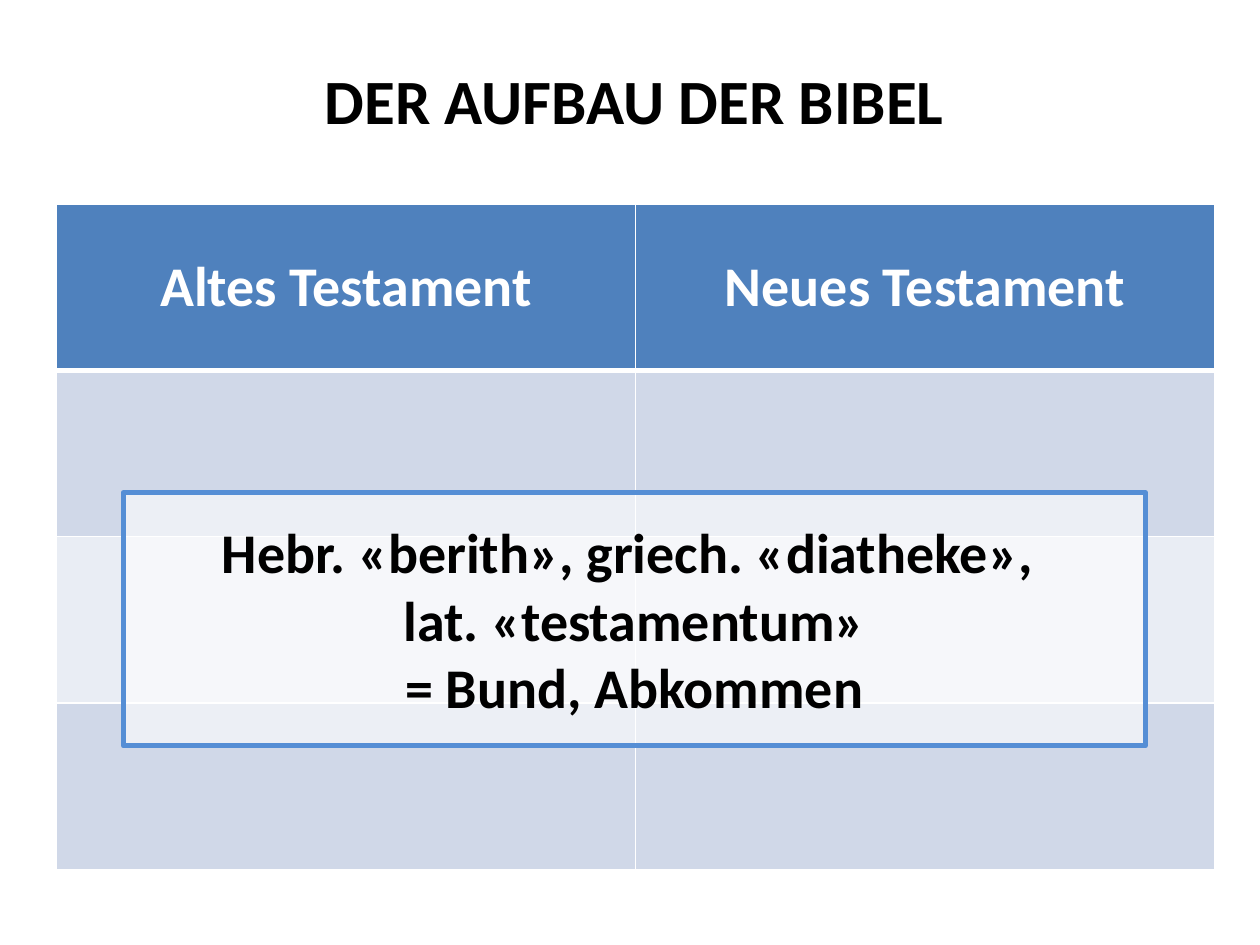
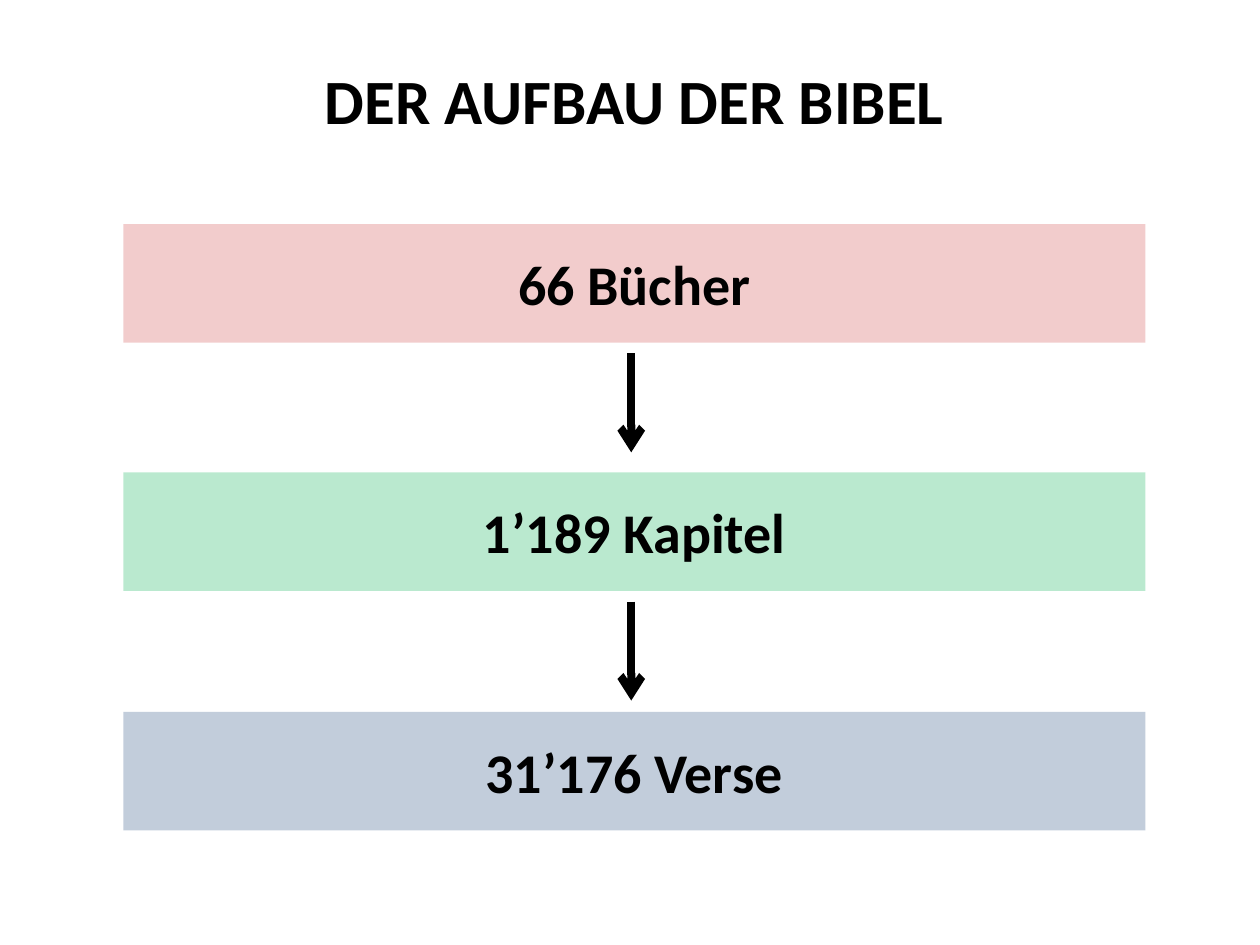
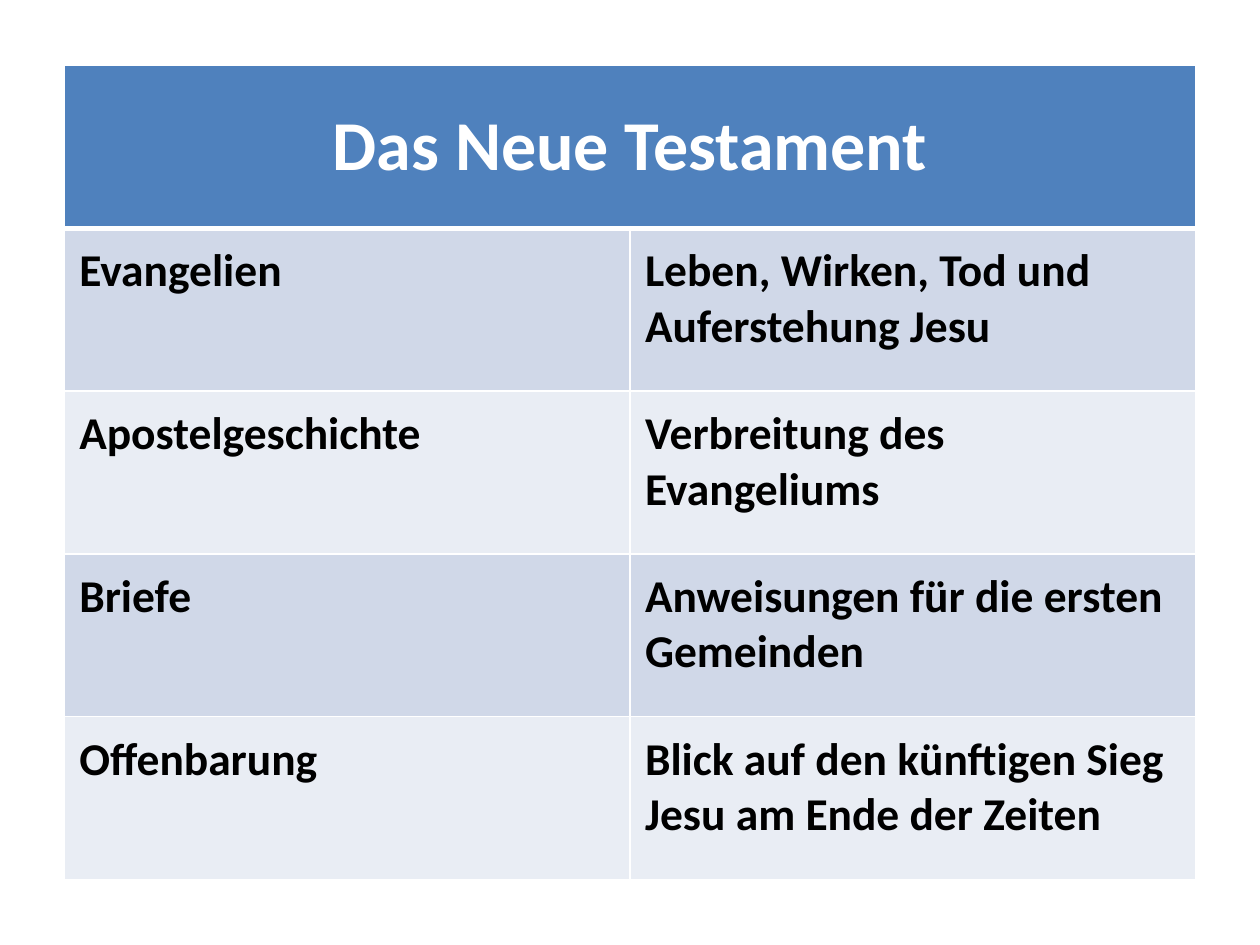
from dataclasses import dataclass
from itertools import pairwise

from lxml.etree import SubElement
from pptx import Presentation
from pptx.dml.color import RGBColor
from pptx.enum.shapes import MSO_CONNECTOR, MSO_SHAPE
from pptx.enum.text import MSO_ANCHOR, MSO_AUTO_SIZE, PP_ALIGN
from pptx.oxml.ns import qn
from pptx.util import Inches, Pt

GRID_COLUMNS, GRID_ROWS = 100, 75
SLIDE_WIDTH, SLIDE_HEIGHT = Inches(10), Inches(7.5)
TITLE_ONLY, BLANK = 5, 6


@dataclass(frozen=True)
class Theme:
    font: str = "Calibri"
    text: str = "000000"
    paper: str = "FFFFFF"
    header: str = "4F81BD"
    stripes: tuple = ("D0D8E8", "E9EDF4")
    frame: str = "558ED5"
    red: str = "C00000"
    green: str = "00B050"
    blue: str = "1F497D"
    veil: int = 60
    table_title_size: int = 40
    title_size: int = 36
    large_size: int = 32
    body_size: int = 26
    border: int = 1
    header_border: int = 3
    arrow: float = 4.5


THEME = Theme()


@dataclass(frozen=True)
class Box:
    """A region in grid columns and rows."""
    left: float
    top: float
    width: float
    height: float

    @property
    def bottom(self):
        return self.top + self.height

    def place(self):
        return across(self.left), down(self.top), across(self.width), down(self.height)


TITLE_BOX = Box(4.3, 4.4, 92.1, 6.3)
TESTAMENTS_BOX = Box(4.5, 16.2, 91.9, 52.8)
NOTE_BOX = Box(9.8, 39.1, 81.1, 20.1)
NEW_TESTAMENT_BOX = Box(5.1, 5.2, 89.8, 64.6)
BAND_LEFT, BAND_WIDTH, BAND_HEIGHT = 9.8, 81.1, 9.4
ARROW_COLUMN, ARROW_GAP, ARROW_LENGTH = 50.1, 0.85, 7.85

BIBLE_TITLE = "DER AUFBAU DER BIBEL"
TESTAMENTS = ("Altes Testament", "Neues Testament")
COVENANT = "Hebr. «berith», griech. «diatheke», \vlat. «testamentum»\v= Bund, Abkommen"
COUNTS = (
    (17.8, "66 Bücher", THEME.red, 20),
    (37.5, "1’189 Kapitel", THEME.green, 27),
    (56.5, "31’176 Verse", THEME.blue, 27),
)
NEW_TESTAMENT = (
    ("Evangelien", "Leben, Wirken, Tod und Auferstehung Jesu"),
    ("Apostelgeschichte", "Verbreitung des Evangeliums"),
    ("Briefe", "Anweisungen für die ersten Gemeinden"),
    ("Offenbarung", "Blick auf den künftigen Sieg Jesu am Ende der Zeiten"),
)
HEADER_FORMAT = {"vertical_anchor": MSO_ANCHOR.MIDDLE}
BODY_FORMAT = {
    "margin_left": Inches(0.12), "margin_top": Inches(0.12),
    "margin_right": Inches(0.16), "margin_bottom": Inches(0.08),
}
FRAME_FORMAT = {
    "word_wrap": True, "auto_size": MSO_AUTO_SIZE.NONE, "vertical_anchor": MSO_ANCHOR.TOP,
    "margin_left": Inches(0.1), "margin_right": Inches(0.1),
}


def across(columns):
    return round(SLIDE_WIDTH * columns / GRID_COLUMNS)


def down(rows):
    return round(SLIDE_HEIGHT * rows / GRID_ROWS)


def apply_format(target, values):
    for name, value in values.items():
        setattr(target, name, value)


def write(text_frame, text, size, color=THEME.text, alignment=PP_ALIGN.CENTER):
    paragraph = text_frame.paragraphs[0]
    paragraph.text = text
    paragraph.alignment = alignment
    for run in paragraph.runs:
        apply_format(run.font, {"name": THEME.font, "size": Pt(size), "bold": True})
        run.font.color.rgb = RGBColor.from_string(color)


def fill_shape(shape, color, opacity):
    shape.fill.solid()
    shape.fill.fore_color.rgb = RGBColor.from_string(color)
    color_element = shape.fill._xPr.find(qn("a:solidFill"))[0]
    SubElement(color_element, qn("a:alpha"), val=str(opacity * 1000))


def add_title(slide, text):
    title = slide.shapes.title
    title.left, title.top, title.width, title.height = TITLE_BOX.place()
    fill_shape(title, THEME.paper, THEME.veil)
    apply_format(title.text_frame, FRAME_FORMAT)
    write(title.text_frame, text, THEME.title_size)


def add_panel(slide, box, text, color, opacity, outline=None):
    panel = slide.shapes.add_shape(MSO_SHAPE.RECTANGLE, *box.place())
    panel.shadow.inherit = False
    fill_shape(panel, color, opacity)
    if outline:
        panel.line.color.rgb = RGBColor.from_string(outline)
        panel.line.width = Pt(3)
    else:
        panel.line.fill.background()
    margins = {"margin_top": Inches(0.2), "margin_bottom": Inches(0.2)}
    apply_format(panel.text_frame, FRAME_FORMAT | margins)
    write(panel.text_frame, text, THEME.large_size)


def add_down_arrow(slide, column, top, length):
    arrow = slide.shapes.add_connector(
        MSO_CONNECTOR.STRAIGHT, across(column), down(top), across(column), down(top + length))
    arrow.line.color.rgb = RGBColor.from_string(THEME.text)
    arrow.line.width = Pt(THEME.arrow)
    SubElement(arrow.line._get_or_add_ln(), qn("a:tailEnd"), type="arrow")
    SubElement(arrow._element.spPr, qn("a:effectLst"))


def draw_borders(cell, row):
    """Draw thin borders, with a heavier one between header and body."""
    widths = dict.fromkeys(("lnL", "lnR", "lnT", "lnB"), THEME.border)
    if row < 2:
        widths["lnT" if row else "lnB"] = THEME.header_border
    properties = cell._tc.get_or_add_tcPr()
    for side, width in widths.items():
        line = SubElement(properties, qn(f"a:{side}"), w=str(Pt(width)))
        SubElement(SubElement(line, qn("a:solidFill")), qn("a:srgbClr"), val=THEME.paper)


def add_striped_table(slide, box, rows, columns):
    """Add an evenly divided table with a blue header and striped rows."""
    table = slide.shapes.add_table(rows, columns, *box.place()).table
    for column in table.columns:
        column.width = across(box.width / columns)
    for row_number, row in enumerate(table.rows):
        row.height = down(box.height / rows)
        color = THEME.stripes[(row_number - 1) % 2] if row_number else THEME.header
        for cell in row.cells:
            draw_borders(cell, row_number)
            cell.fill.solid()
            cell.fill.fore_color.rgb = RGBColor.from_string(color)
    return table


def write_header(cell, text, size):
    apply_format(cell, HEADER_FORMAT)
    write(cell.text_frame, text, size, THEME.paper)


def add_slide(presentation, layout):
    return presentation.slides.add_slide(presentation.slide_layouts[layout])


def build_testaments(presentation):
    slide = add_slide(presentation, TITLE_ONLY)
    add_title(slide, BIBLE_TITLE)
    table = add_striped_table(slide, TESTAMENTS_BOX, 4, len(TESTAMENTS))
    for column, name in enumerate(TESTAMENTS):
        write_header(table.cell(0, column), name, THEME.large_size)
    add_panel(slide, NOTE_BOX, COVENANT, THEME.paper, THEME.veil, THEME.frame)


def build_counts(presentation):
    slide = add_slide(presentation, TITLE_ONLY)
    add_title(slide, BIBLE_TITLE)
    bands = [Box(BAND_LEFT, top, BAND_WIDTH, BAND_HEIGHT) for top, *_ in COUNTS]
    for band, (_, text, color, opacity) in zip(bands, COUNTS):
        add_panel(slide, band, text, color, opacity)
    for upper, _ in pairwise(bands):
        add_down_arrow(slide, ARROW_COLUMN, upper.bottom + ARROW_GAP, ARROW_LENGTH)


def build_new_testament(presentation):
    slide = add_slide(presentation, BLANK)
    table = add_striped_table(slide, NEW_TESTAMENT_BOX, len(NEW_TESTAMENT) + 1, 2)
    table.cell(0, 0).merge(table.cell(0, 1))
    write_header(table.cell(0, 0), "Das Neue Testament", THEME.table_title_size)
    for row, texts in enumerate(NEW_TESTAMENT, start=1):
        for column, text in enumerate(texts):
            cell = table.cell(row, column)
            apply_format(cell, BODY_FORMAT)
            write(cell.text_frame, text, THEME.body_size, alignment=PP_ALIGN.LEFT)


def main():
    presentation = Presentation()
    presentation.slide_width, presentation.slide_height = SLIDE_WIDTH, SLIDE_HEIGHT
    build_testaments(presentation)
    build_counts(presentation)
    build_new_testament(presentation)
    presentation.save("out.pptx")


if __name__ == "__main__":
    main()
